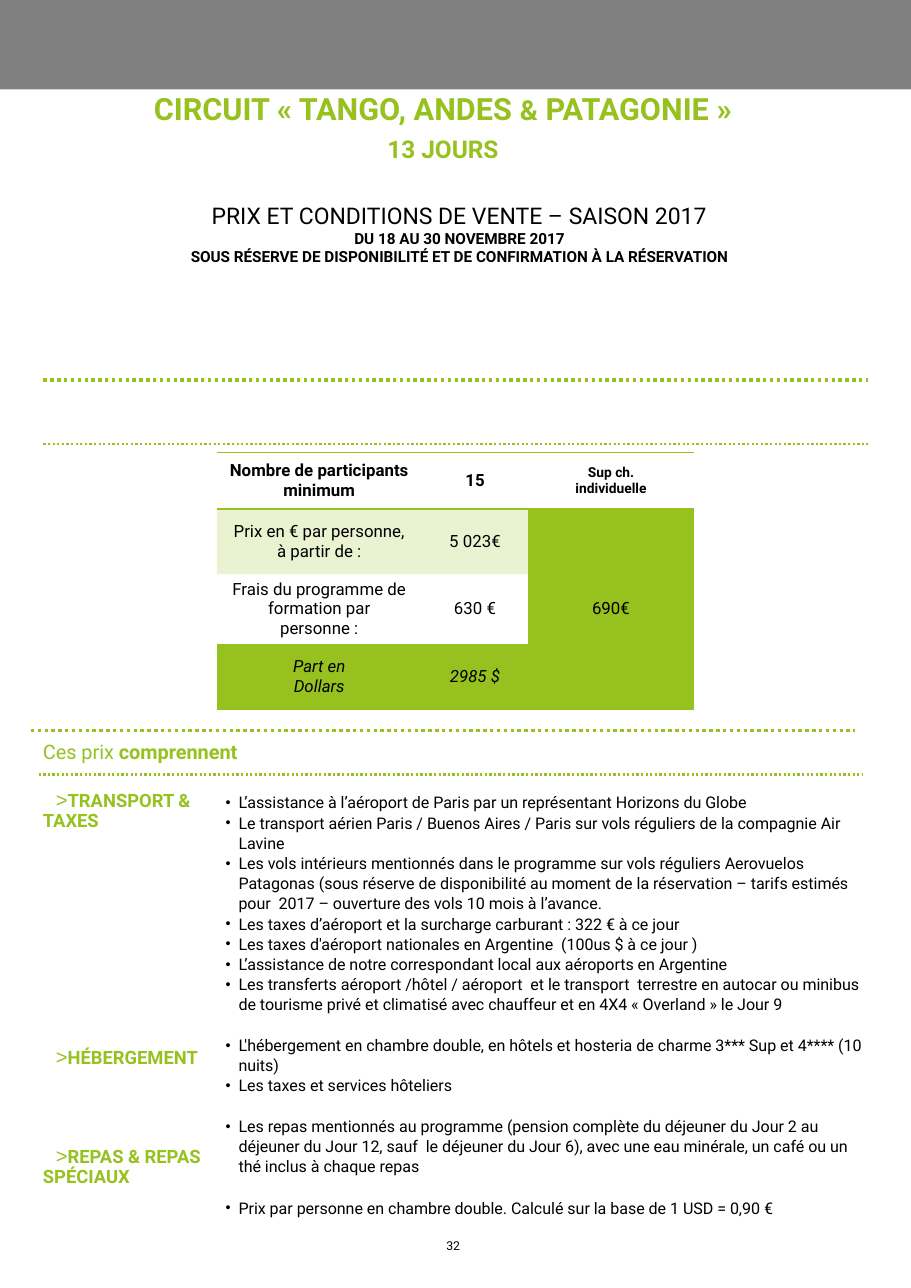
from lxml.etree import SubElement
from pptx import Presentation
from pptx.dml.color import RGBColor
from pptx.enum.dml import MSO_LINE
from pptx.enum.shapes import MSO_CONNECTOR, MSO_SHAPE
from pptx.enum.text import MSO_ANCHOR, MSO_AUTO_SIZE, PP_ALIGN
from pptx.oxml.ns import qn
from pptx.util import Cm, Pt

COLORS = {"green": "96C11F", "black": "000000", "grey": "808080"}
FONT = "Roboto"
NO_STYLE = "{2D5ABB26-0587-4C30-8999-92F81FD0307C}"

# Each entry: text, space before in points
LABELS = [
    ("TRANSPORT & TAXES", 0),
    ("HÉBERGEMENT", 142),
    ("REPAS & REPAS SPÉCIAUX", 52),
]
ITEMS = [
    ("L’assistance à l’aéroport de Paris par un représentant Horizons du Globe", 0),
    ("Le transport aérien Paris / Buenos Aires / Paris sur vols réguliers de la "
     "compagnie Air Lavine", 0),
    ("Les vols intérieurs mentionnés dans le programme sur vols réguliers Aerovuelos "
     "Patagonas (sous réserve de disponibilité au moment de la réservation – tarifs "
     "estimés pour  2017 – ouverture des vols 10 mois à l’avance.", 0),
    ("Les taxes d’aéroport et la surcharge carburant : 322 € à ce jour", 0),
    ("Les taxes d'aéroport nationales en Argentine  (100us $ à ce jour )", 0),
    ("L’assistance de notre correspondant local aux aéroports en Argentine", 0),
    ("Les transferts aéroport /hôtel / aéroport  et le transport  terrestre en autocar "
     "ou minibus de tourisme privé et climatisé avec chauffeur et en 4X4 "
     "« Overland » le Jour 9", 0),
    ("L'hébergement en chambre double, en hôtels et hosteria de charme 3*** Sup et "
     "4**** (10 nuits)", 13.3),
    ("Les taxes et services hôteliers", 0),
    ("Les repas mentionnés au programme (pension complète du déjeuner du Jour 2 au "
     "déjeuner du Jour 12, sauf  le déjeuner du Jour 6), avec une eau minérale, un "
     "café ou un thé inclus à chaque repas", 13.3),
]
NOTE = [("Prix par personne en chambre double. Calculé sur la base de 1 USD = 0,90 €", 0)]
PRICES = [
    ["Nombre de participants minimum", "15", "Sup ch.\nindividuelle"],
    ["Prix en € par personne,\nà partir de :", "5 023€", "690€"],
    ["Frais du programme de formation par personne :", "630 €", ""],
    ["Part en\vDollars", "2985 $", ""],
]


def color(name):
    return RGBColor.from_string(COLORS[name])


def style(para, size, tone="black", bold=False, italic=False):
    font = para.font
    font.name, font.size = FONT, Pt(size)
    font.bold, font.italic = bold, italic
    font.color.rgb = color(tone)


def set_frame(frame, anchor=MSO_ANCHOR.TOP, right=0.1):
    frame.word_wrap = True
    frame.auto_size = MSO_AUTO_SIZE.NONE
    frame.vertical_anchor = anchor
    frame.margin_left, frame.margin_right = Cm(0.1), Cm(right)
    frame.margin_top = frame.margin_bottom = 0


def add_box(slide, left, top, width, height, **frame_args):
    box = slide.shapes.add_textbox(Cm(left), Cm(top), Cm(width), Cm(height))
    set_frame(box.text_frame, **frame_args)
    return box.text_frame


def next_para(frame, index):
    return frame.add_paragraph() if index else frame.paragraphs[0]


def add_bullet(para, char, percent, margin, indent):
    props = para._p.get_or_add_pPr()
    props.set("marL", str(Cm(margin)))
    props.set("indent", str(Cm(indent)))
    SubElement(props, qn("a:buSzPct"), val=str(percent * 1000))
    SubElement(props, qn("a:buFont"), typeface="Arial")
    SubElement(props, qn("a:buChar"), char=char)


def fill_list(frame, entries, bullet, spacing, **font_args):
    for index, (text, gap) in enumerate(entries):
        para = next_para(frame, index)
        para.text = text
        add_bullet(para, *bullet)
        para.line_spacing = spacing
        if gap:
            para.space_before = Pt(gap)
        style(para, **font_args)


def add_rule(slide, left, top, weight):
    """Draw a dotted green line across the page."""
    rule = slide.shapes.add_connector(
        MSO_CONNECTOR.STRAIGHT, Cm(left), Cm(top), Cm(left + 19), Cm(top))
    rule.line.color.rgb = color("green")
    rule.line.width = Pt(weight)
    rule.line.dash_style = MSO_LINE.ROUND_DOT
    SubElement(rule._element.spPr, qn("a:effectLst"))


def add_band(slide):
    band = slide.shapes.add_shape(MSO_SHAPE.RECTANGLE, 0, 0, Cm(21), Cm(2.06))
    band.shadow.inherit = False
    band.fill.solid()
    band.fill.fore_color.rgb = color("grey")
    band.line.fill.background()


def set_title(slide):
    title = slide.shapes.title
    title.left, title.top, title.width, title.height = Cm(0.71), Cm(1.65), Cm(19), Cm(2.11)
    set_frame(title.text_frame, anchor=MSO_ANCHOR.BOTTOM)
    para = title.text_frame.paragraphs[0]
    para.alignment = PP_ALIGN.CENTER
    para.line_spacing = Pt(24)
    style(para, 20, "green", bold=True)
    parts = [("CIRCUIT « TANGO, ANDES ", 20), ("&", 18), (" PATAGONIE »", 20), ("13 JOURS", 16)]
    for text, size in parts:
        if text == "13 JOURS":
            para.add_line_break()
        run = para.add_run()
        run.text, run.font.size = text, Pt(size)


def add_heading(slide):
    frame = add_box(slide, 1.09, 4.65, 19, 2.49)
    lines = [
        ("PRIX ET CONDITIONS DE VENTE – SAISON 2017", 15, False),
        ("DU 18 AU 30 NOVEMBRE 2017", 10, True),
        ("SOUS RÉSERVE DE DISPONIBILITÉ ET DE CONFIRMATION À LA RÉSERVATION", 10, True),
    ]
    for index, (text, size, bold) in enumerate(lines):
        para = next_para(frame, index)
        para.text = text
        para.alignment = PP_ALIGN.CENTER
        style(para, size, bold=bold)


def add_section(slide):
    frame = add_box(slide, 0.89, 16.84, 19, 0.99, anchor=MSO_ANCHOR.MIDDLE)
    para = frame.paragraphs[0]
    style(para, 13, "green")
    para.add_run().text = "Ces prix "
    strong = para.add_run()
    strong.text, strong.font.bold = "comprennent", True


def add_edge(cell, side):
    edge = SubElement(cell._tc.get_or_add_tcPr(), qn("a:" + side), w=str(Pt(1)))
    paint = SubElement(edge, qn("a:solidFill"))
    SubElement(paint, qn("a:srgbClr"), val=COLORS["green"])


def tint(cell):
    """Fill a cell with green at 20 % opacity."""
    cell.fill.solid()
    cell.fill.fore_color.rgb = color("green")
    tone = cell._tc.tcPr.find(".//" + qn("a:solidFill") + "/" + qn("a:srgbClr"))
    SubElement(tone, qn("a:alpha"), val="20000")


def fill_cell(cell, text, row, col):
    cell.vertical_anchor = MSO_ANCHOR.MIDDLE
    cell.text = text
    for para in cell.text_frame.paragraphs:
        para.alignment = PP_ALIGN.CENTER
        size = 9 if (row, col) == (0, 2) else 11
        style(para, size, bold=row == 0, italic=row == 3)
    if row == 0:
        add_edge(cell, "lnT")
    if row in (0, 3) or (row, col) == (1, 2):
        add_edge(cell, "lnB")
    if row in (1, 3) or (row, col) == (2, 2):
        tint(cell)
    else:
        cell.fill.background()


def add_prices(slide):
    widths, heights = [4.72, 2.46, 3.81], [1.3, 1.5, 1.5, 1.5]
    frame = slide.shapes.add_table(
        4, 3, Cm(5), Cm(10.44), Cm(sum(widths)), Cm(sum(heights)))
    table = frame.table
    table.first_row = table.horz_banding = False
    table._tbl.tblPr.find(qn("a:tableStyleId")).text = NO_STYLE
    for column, width in zip(table.columns, widths):
        column.width = Cm(width)
    for row, height in zip(table.rows, heights):
        row.height = Cm(height)
    for row, texts in enumerate(PRICES):
        for col, text in enumerate(texts):
            fill_cell(table.cell(row, col), text, row, col)
    table.cell(1, 2).merge(table.cell(3, 2))


def add_page(slide):
    frame = add_box(slide, 10.19, 28.55, 0.69, 0.33)
    frame.word_wrap = False
    para = frame.paragraphs[0]
    para.text = "32"
    style(para, 8)


def main():
    deck = Presentation()
    deck.slide_width, deck.slide_height = Cm(21), Cm(29.7)
    slide = deck.slides.add_slide(deck.slide_layouts[5])
    add_page(slide)
    add_band(slide)
    for left, top, weight in [(1, 8.76, 2.25), (1, 10.24, 1.5),
                              (0.71, 16.84, 2.25), (0.89, 17.86, 1.5)]:
        add_rule(slide, left, top, weight)
    set_title(slide)
    add_heading(slide)
    add_prices(slide)
    add_section(slide)
    labels = add_box(slide, 0.89, 18.26, 3.99, 7.95, right=0)
    fill_list(labels, LABELS, (">", 110, 0, 0.3), 0.9, size=12, tone="green", bold=True)
    dot = ("•", 90, 0.3, -0.3)
    fill_list(add_box(slide, 5.1, 18.26, 15.01, 8.6), ITEMS, dot, 1.05, size=10.5)
    fill_list(add_box(slide, 5.1, 27.61, 15.01, 1.24), NOTE, dot, 1.05, size=10.5)
    # Keep the title above the grey band
    slide.shapes._spTree.append(slide.shapes.title._element)
    deck.save("out.pptx")


if __name__ == "__main__":
    main()
